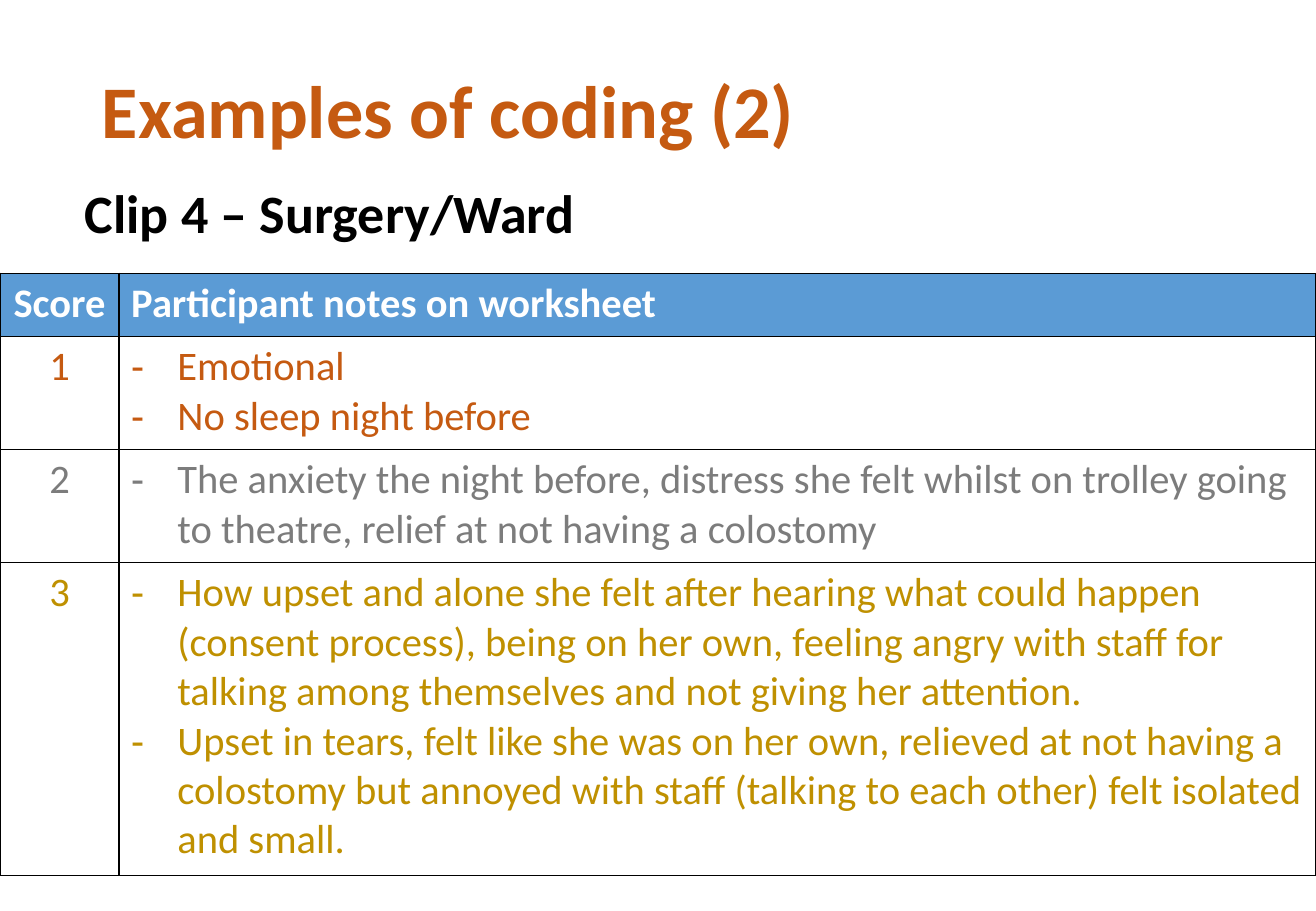
from lxml import etree
from pptx import Presentation
from pptx import util as u
from pptx.dml.color import RGBColor
from pptx.enum import text
from pptx.oxml import ns

WIDTH, HEIGHT = 10.83, 7.5
FONT = "Calibri"
BLACK, WHITE, BLUE, ORANGE = "000000", "FFFFFF", "5B9BD5", "C55A11"
SCORE_WIDTH = 0.98
TABLE_TOP = 0.3 * HEIGHT
ROW_HEIGHTS = [0.52, 0.93, 0.93, 2.58]
BULLET_INDENT = 0.38

# Score, colour, participant notes
SCORES = [
    ("1", ORANGE, ["Emotional", "No sleep night before"]),
    ("2", "7C7C7C", [
        "The anxiety the night before, distress she felt whilst on trolley "
        "going to theatre, relief at not having a colostomy"]),
    ("3", "BF9000", [
        "How upset and alone she felt after hearing what could happen "
        "(consent process), being on her own, feeling angry with staff for "
        "talking among themselves and not giving her attention.",
        "Upset in tears, felt like she was on her own, relieved at not "
        "having a colostomy but annoyed with staff (talking to each other) "
        "felt isolated and small."]),
]


def rgb(value):
    return RGBColor.from_string(value)


def format_runs(paragraph, size, color, bold=False):
    for run in paragraph.runs:
        run.font.name = FONT
        run.font.size = u.Pt(size)
        run.font.bold = bold
        run.font.color.rgb = rgb(color)


def add_heading(slide, words, box, size, color, anchor, space_before=0):
    shape = slide.shapes.add_textbox(*[u.Inches(length) for length in box])
    frame = shape.text_frame
    frame.word_wrap = True
    frame.vertical_anchor = anchor
    frame.text = words
    paragraph = frame.paragraphs[0]
    paragraph.line_spacing = 0.9
    paragraph.space_before = u.Pt(space_before)
    format_runs(paragraph, size, color, bold=True)


def add_dash(paragraph):
    properties = paragraph._p.get_or_add_pPr()
    properties.set("marL", str(u.Inches(BULLET_INDENT)))
    properties.set("indent", str(-u.Inches(BULLET_INDENT)))
    font = etree.SubElement(properties, ns.qn("a:buFont"))
    font.set("typeface", FONT)
    bullet = etree.SubElement(properties, ns.qn("a:buChar"))
    bullet.set("char", "‐")


def add_borders(cell):
    properties = cell._tc.get_or_add_tcPr()
    for position, side in enumerate(("lnL", "lnR", "lnT", "lnB")):
        line = etree.Element(ns.qn("a:" + side), w=str(u.Pt(1)))
        fill = etree.SubElement(line, ns.qn("a:solidFill"))
        etree.SubElement(fill, ns.qn("a:srgbClr"), val=BLACK)
        properties.insert(position, line)


def fill_cell(cell, lines, color, background=WHITE, bold=False,
              centered=False, dashes=False):
    cell.fill.solid()
    cell.fill.fore_color.rgb = rgb(background)
    add_borders(cell)
    cell.text_frame.text = "\n".join(lines)
    for paragraph in cell.text_frame.paragraphs:
        if centered:
            paragraph.alignment = text.PP_ALIGN.CENTER
        if dashes:
            add_dash(paragraph)
        format_runs(paragraph, 24, color, bold)


def add_score_table(slide):
    table = slide.shapes.add_table(
        len(ROW_HEIGHTS), 2, 0, u.Inches(TABLE_TOP),
        u.Inches(WIDTH), u.Inches(sum(ROW_HEIGHTS))).table
    table.columns[0].width = u.Inches(SCORE_WIDTH)
    table.columns[1].width = u.Inches(WIDTH - SCORE_WIDTH)
    for row, height in zip(table.rows, ROW_HEIGHTS):
        row.height = u.Inches(height)

    # Header row
    fill_cell(table.cell(0, 0), ["Score"], WHITE, BLUE, bold=True,
              centered=True)
    fill_cell(table.cell(0, 1), ["Participant notes on worksheet"], WHITE,
              BLUE, bold=True)

    # One row per score
    for row, (score, color, notes) in enumerate(SCORES, start=1):
        fill_cell(table.cell(row, 0), [score], color, centered=True)
        fill_cell(table.cell(row, 1), notes, color, dashes=True)


def main():
    presentation = Presentation()
    presentation.slide_width = u.Inches(WIDTH)
    presentation.slide_height = u.Inches(HEIGHT)
    slide = presentation.slides.add_slide(presentation.slide_layouts[6])

    # Title and clip name
    add_heading(slide, "Examples of coding (2)", (0.74, 0.32, 9.34, 1.24),
                44, ORANGE, text.MSO_ANCHOR.MIDDLE)
    add_heading(slide, "Clip 4 – Surgery/Ward", (0.6, 1.49, 9.34, 0.62),
                32, BLACK, text.MSO_ANCHOR.TOP, space_before=10)

    # Scores with notes
    add_score_table(slide)
    presentation.save("out.pptx")


if __name__ == "__main__":
    main()
